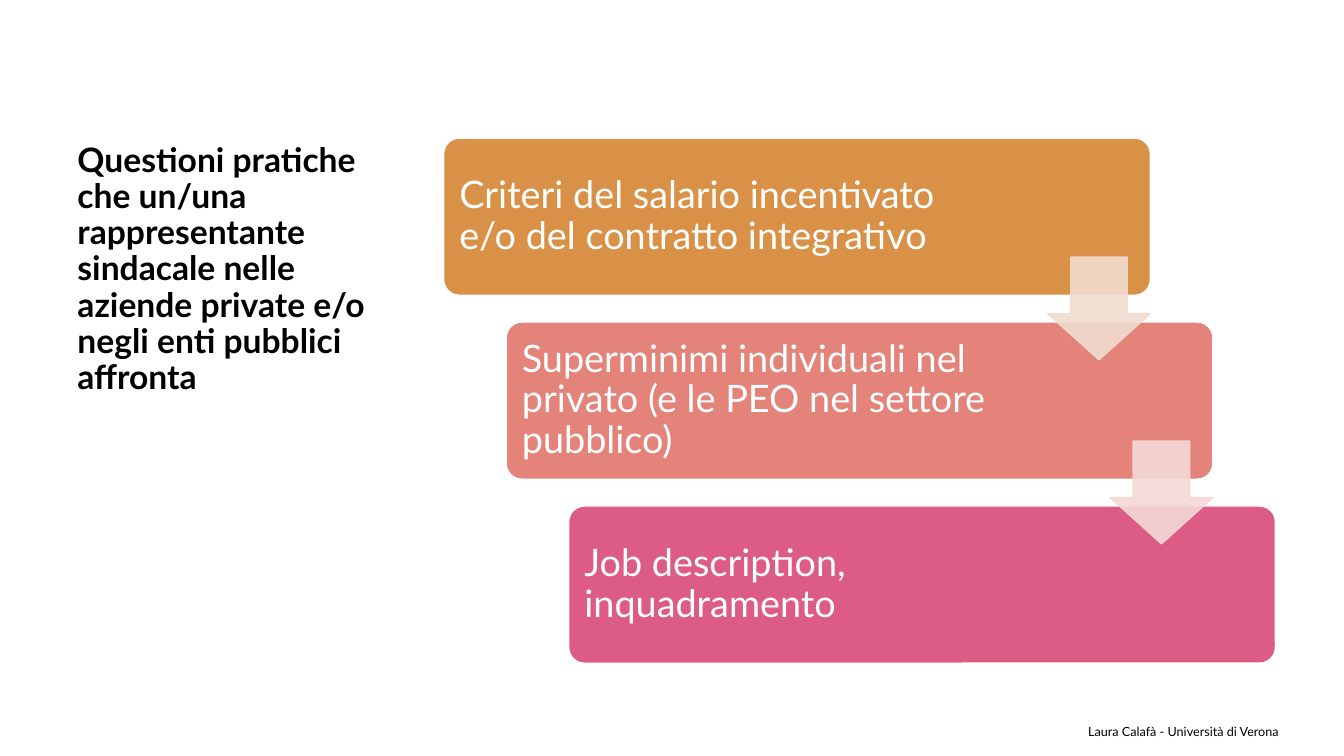
from lxml import etree
from pptx import Presentation
from pptx.dml.color import RGBColor
from pptx.enum import shapes, text
from pptx.oxml.ns import qn
from pptx.util import Inches, Pt

FONT = "Lato"
BLACK = RGBColor(0x00, 0x00, 0x00)
WHITE = RGBColor(0xFF, 0xFF, 0xFF)
ORANGE = RGBColor(0xD9, 0x91, 0x47)
CORAL = RGBColor(0xE3, 0x83, 0x79)
PINK = RGBColor(0xDD, 0x5C, 0x85)
PALE_ORANGE = RGBColor(0xF1, 0xDC, 0xCF)
PALE_CORAL = RGBColor(0xF4, 0xD9, 0xD7)

TITLE = ("Questioni pratiche che un/una rappresentante sindacale nelle "
         "aziende private e/o negli enti pubblici affronta")
FOOTER = "Laura Calafà - Università di Verona"
STEPS = [
    ("Criteri del salario incentivato e/o del contratto integrativo", ORANGE),
    ("Superminimi individuali nel privato (e le PEO nel settore pubblico)", CORAL),
    ("Job description, inquadramento", PINK),
]
ARROW_COLORS = [PALE_ORANGE, PALE_CORAL]

# Staircase geometry, in inches
STEP_LEFT, STEP_TOP = 4.4, 1.37
STEP_WIDTH, STEP_HEIGHT = 7.01, 1.56
SHIFT_X, SHIFT_Y = 0.62, 1.825
ARROW_LEFT, ARROW_TOP, ARROW_SIZE = 10.39, 2.55, 1.02


def write_text(shape, content, size, color, bold=False, spacing=None,
               align=text.PP_ALIGN.LEFT, anchor=text.MSO_ANCHOR.MIDDLE):
    frame = shape.text_frame
    frame.word_wrap = True
    frame.vertical_anchor = anchor
    para = frame.paragraphs[0]
    para.text = content
    para.alignment = align
    para.line_spacing = spacing
    para.font.name = FONT
    para.font.size = Pt(size)
    para.font.bold = bold
    para.font.color.rgb = color


def add_label(page, left, top, width, height, content, size, **style):
    box = page.shapes.add_textbox(
        Inches(left), Inches(top), Inches(width), Inches(height))
    write_text(box, content, size, BLACK, **style)


def add_block(page, kind, left, top, width, height, fill, line):
    block = page.shapes.add_shape(
        kind, Inches(left), Inches(top), Inches(width), Inches(height))
    block.shadow.inherit = False
    block.fill.solid()
    block.fill.fore_color.rgb = fill
    block.line.color.rgb = line
    block.line.width = Pt(1)
    return block


def add_step(page, index, content, color):
    step = add_block(page, shapes.MSO_SHAPE.ROUNDED_RECTANGLE,
                     STEP_LEFT + index * SHIFT_X, STEP_TOP + index * SHIFT_Y,
                     STEP_WIDTH, STEP_HEIGHT, color, WHITE)
    step.adjustments[0] = 0.1
    # The wide right margin keeps the text clear of the arrows
    step.text_frame.margin_left = Inches(0.11)
    step.text_frame.margin_right = Inches(1.72)
    write_text(step, content, 27, WHITE, spacing=0.9)


def add_arrow(page, index, color):
    arrow = add_block(page, shapes.MSO_SHAPE.DOWN_ARROW,
                      ARROW_LEFT + index * SHIFT_X, ARROW_TOP + index * SHIFT_Y,
                      ARROW_SIZE, ARROW_SIZE, color, color)
    arrow.adjustments[0] = 0.55
    arrow.adjustments[1] = 0.45
    # Fill and outline at 90% opacity
    for tint in arrow.element.spPr.iter(qn("a:srgbClr")):
        etree.SubElement(tint, qn("a:alpha")).set("val", "90000")


def main():
    deck = Presentation()
    deck.slide_width, deck.slide_height = Inches(13.33), Inches(7.5)
    page = deck.slides.add_slide(deck.slide_layouts[6])

    # Title and footer
    add_label(page, 0.67, 1.37, 3.18, 5.22, TITLE, 24, bold=True,
              spacing=0.9, anchor=text.MSO_ANCHOR.TOP)
    add_label(page, 9.71, 7.06, 3.07, 0.4, FOOTER, 9,
              align=text.PP_ALIGN.RIGHT)

    # Descending steps, then the arrows that overlap them
    for index, (content, color) in enumerate(STEPS):
        add_step(page, index, content, color)
    for index, color in enumerate(ARROW_COLORS):
        add_arrow(page, index, color)

    deck.save("out.pptx")


if __name__ == "__main__":
    main()
